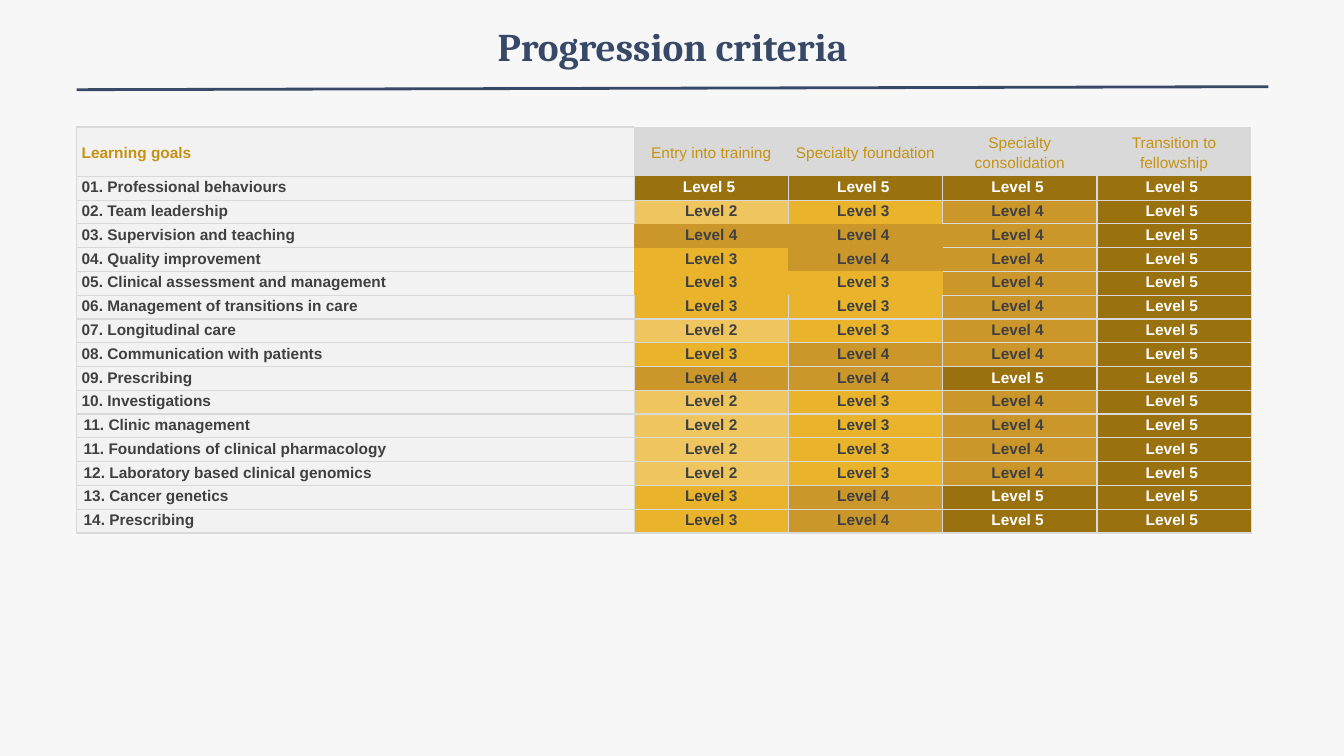
from lxml import etree
from pptx import Presentation
from pptx.dml.color import RGBColor
from pptx.enum import shapes, text
from pptx.oxml import ns
from pptx.util import Inches, Pt

NAVY, GOLD, GREY, PALE = "384967", "C69214", "D9D9D9", "F2F2F2"
DARK, WHITE = "404040", "FFFFFF"
LEVEL_FILLS = {2: "EFC560", 3: "E9B32B", 4: "CB972B", 5: "99720F"}
STAGES = ["Entry into training", "Specialty foundation",
          "Specialty consolidation", "Transition to fellowship"]
GOALS = [
    ("01. Professional behaviours", (5, 5, 5, 5)),
    ("02. Team leadership", (2, 3, 4, 5)),
    ("03. Supervision and teaching", (4, 4, 4, 5)),
    ("04. Quality improvement", (3, 4, 4, 5)),
    ("05. Clinical assessment and management", (3, 3, 4, 5)),
    ("06. Management of transitions in care", (3, 3, 4, 5)),
    ("07. Longitudinal care", (2, 3, 4, 5)),
    ("08. Communication with patients", (3, 4, 4, 5)),
    ("09. Prescribing", (4, 4, 5, 5)),
    ("10. Investigations", (2, 3, 4, 5)),
    ("11. Clinic management", (2, 3, 4, 5)),
    ("11. Foundations of clinical pharmacology", (2, 3, 4, 5)),
    ("12. Laboratory based clinical genomics", (2, 3, 4, 5)),
    ("13. Cancer genetics", (3, 4, 5, 5)),
    ("14. Prescribing", (3, 4, 5, 5)),
]
SIDES = {"a:lnL": (0, -1), "a:lnR": (0, 1), "a:lnT": (-1, 0), "a:lnB": (1, 0)}
CENTER = text.PP_ALIGN.CENTER


def rgb(value):
    return RGBColor.from_string(value)


def set_format(obj, values):
    for name, value in values.items():
        setattr(obj, name, value)


def fill_solid(fill, color):
    fill.solid()
    fill.fore_color.rgb = rgb(color)


def write(tf, content, color, font, layout):
    p = tf.paragraphs[0]
    set_format(p, layout)
    r = p.add_run()
    r.text = content
    set_format(r.font, font)
    r.font.color.rgb = rgb(color)


def add_title(s, content):
    sp = s.shapes.add_textbox(Inches(2.17), Inches(0.17), Inches(9), Inches(1.25))
    sp.text_frame.word_wrap = True
    write(sp.text_frame, content, NAVY,
          {"name": "Cambria", "size": Pt(28), "bold": True}, {"alignment": CENTER})


def add_rule(s):
    sp = s.shapes.add_connector(shapes.MSO_CONNECTOR.STRAIGHT, Inches(0.76),
                                Inches(0.89), Inches(12.58), Inches(0.86))
    sp.line.color.rgb = rgb(NAVY)
    sp.line.width = Pt(2)
    etree.SubElement(sp._element.spPr, ns.qn("a:effectLst"))


def is_borderless(row, col):
    return row == 0 and col >= 1 or row in (3, 4, 5) and col in (1, 2)


def set_borders(cell, row, col):
    tc_pr = cell._tc.get_or_add_tcPr()
    for index, (tag, (down, right)) in enumerate(SIDES.items()):
        ln = etree.Element(ns.qn(tag), w=str(Pt(1)))
        if is_borderless(row, col) or is_borderless(row + down, col + right):
            etree.SubElement(ln, ns.qn("a:noFill"))
        else:
            solid = etree.SubElement(ln, ns.qn("a:solidFill"))
            etree.SubElement(solid, ns.qn("a:srgbClr"), val=GREY)
        tc_pr.insert(index, ln)


def fill_cell(table, row, col, content, fill, color, bold=True):
    cell = table.cell(row, col)
    inset = Inches(0.07 if col == 0 and row > 10 else 0.05)
    anchor = text.MSO_ANCHOR.MIDDLE if row == 0 else text.MSO_ANCHOR.TOP
    set_format(cell, {"margin_left": inset, "margin_right": inset,
                      "margin_top": 0, "margin_bottom": 0,
                      "vertical_anchor": anchor})
    fill_solid(cell.fill, fill)
    set_borders(cell, row, col)
    write(cell.text_frame, content, color,
          {"name": "Arial", "size": Pt(11), "bold": bold},
          {"alignment": CENTER if col else text.PP_ALIGN.LEFT, "line_spacing": 1.15})


def add_criteria_table(s):
    height, header_height = 4.03, 0.49
    table = s.shapes.add_table(len(GOALS) + 1, len(STAGES) + 1, Inches(0.76),
                               Inches(1.26), Inches(11.65), Inches(height)).table
    set_format(table, {"first_row": False, "horz_banding": False})
    for col, column in enumerate(table.columns):
        column.width = Inches(1.53 if col else 5.53)
    for index, row in enumerate(table.rows):
        row.height = Inches((height - header_height) / len(GOALS) if index else header_height)
    fill_cell(table, 0, 0, "Learning goals", PALE, GOLD)
    for col, stage in enumerate(STAGES, 1):
        fill_cell(table, 0, col, stage, GREY, GOLD, bold=False)
    for row, (goal, levels) in enumerate(GOALS, 1):
        fill_cell(table, row, 0, goal, PALE, DARK)
        for col, level in enumerate(levels, 1):
            ending = "" if col == 1 and row > 1 else " "
            fill_cell(table, row, col, f"Level {level}{ending}", LEVEL_FILLS[level],
                      WHITE if level == 5 else DARK)


def main():
    prs = Presentation()
    set_format(prs, {"slide_width": Inches(13.33), "slide_height": Inches(7.5)})
    s = prs.slides.add_slide(prs.slide_layouts[6])
    fill_solid(s.background.fill, "F7F7F7")
    add_title(s, "Progression criteria")
    add_rule(s)
    add_criteria_table(s)
    prs.save("out.pptx")


if __name__ == "__main__":
    main()
